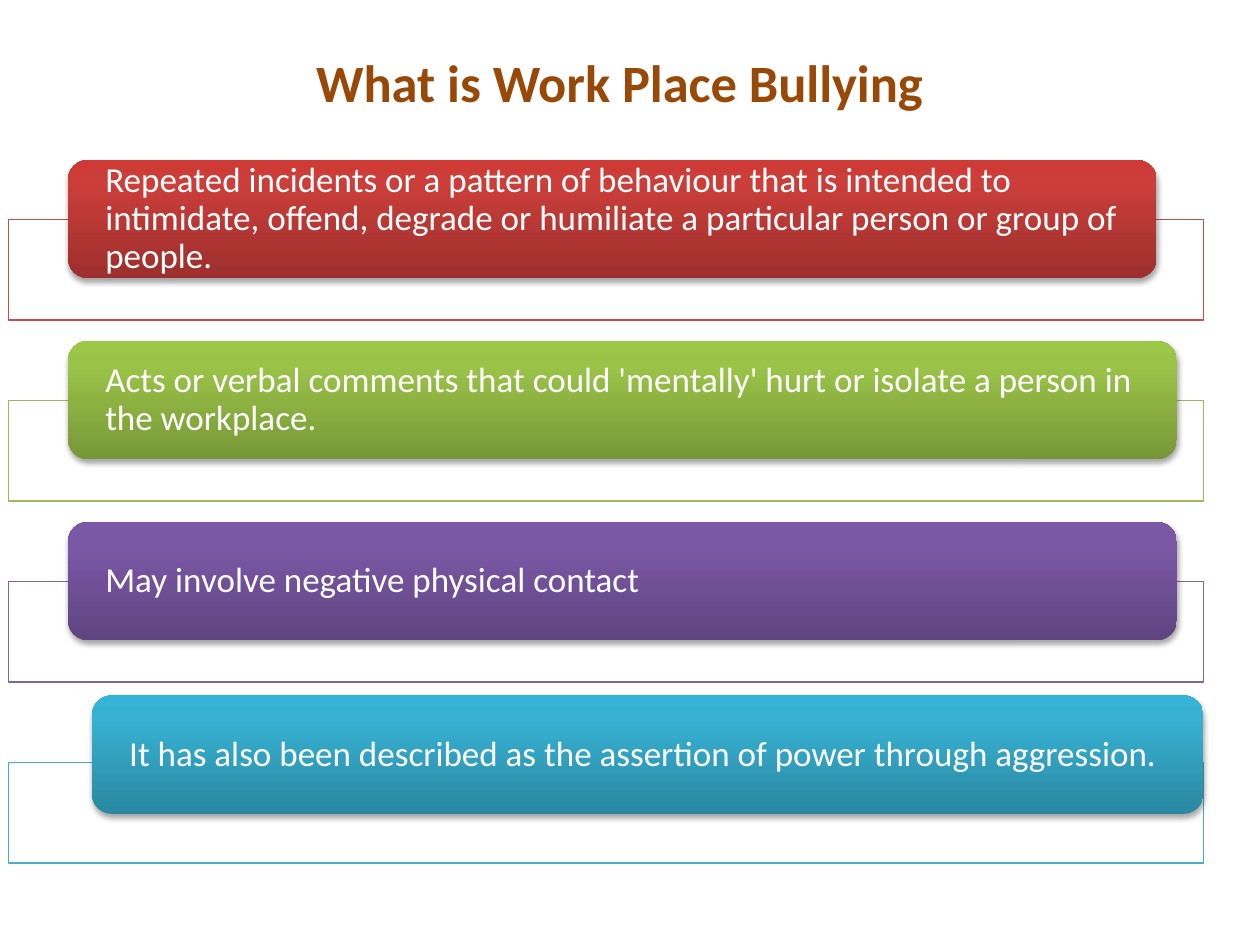
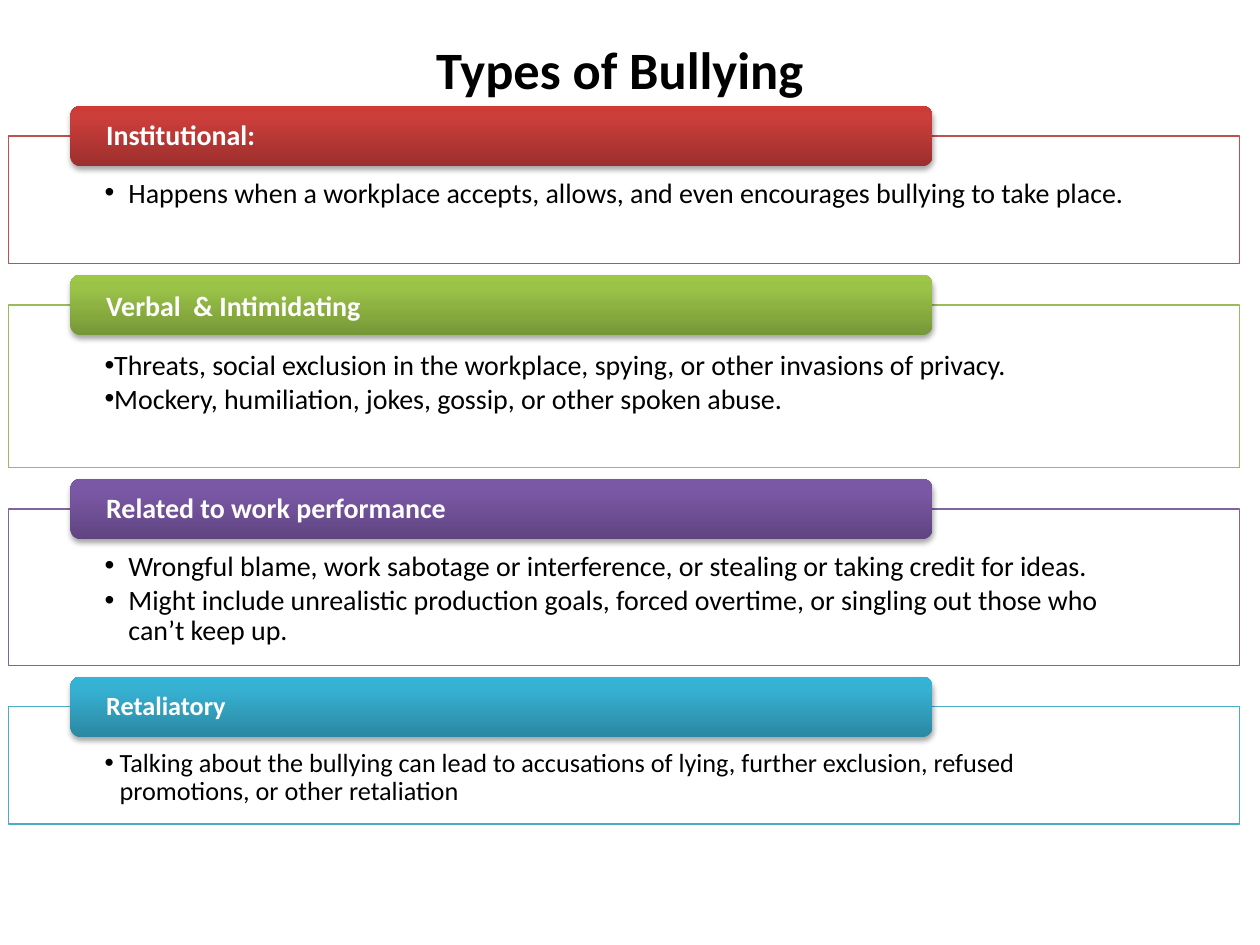
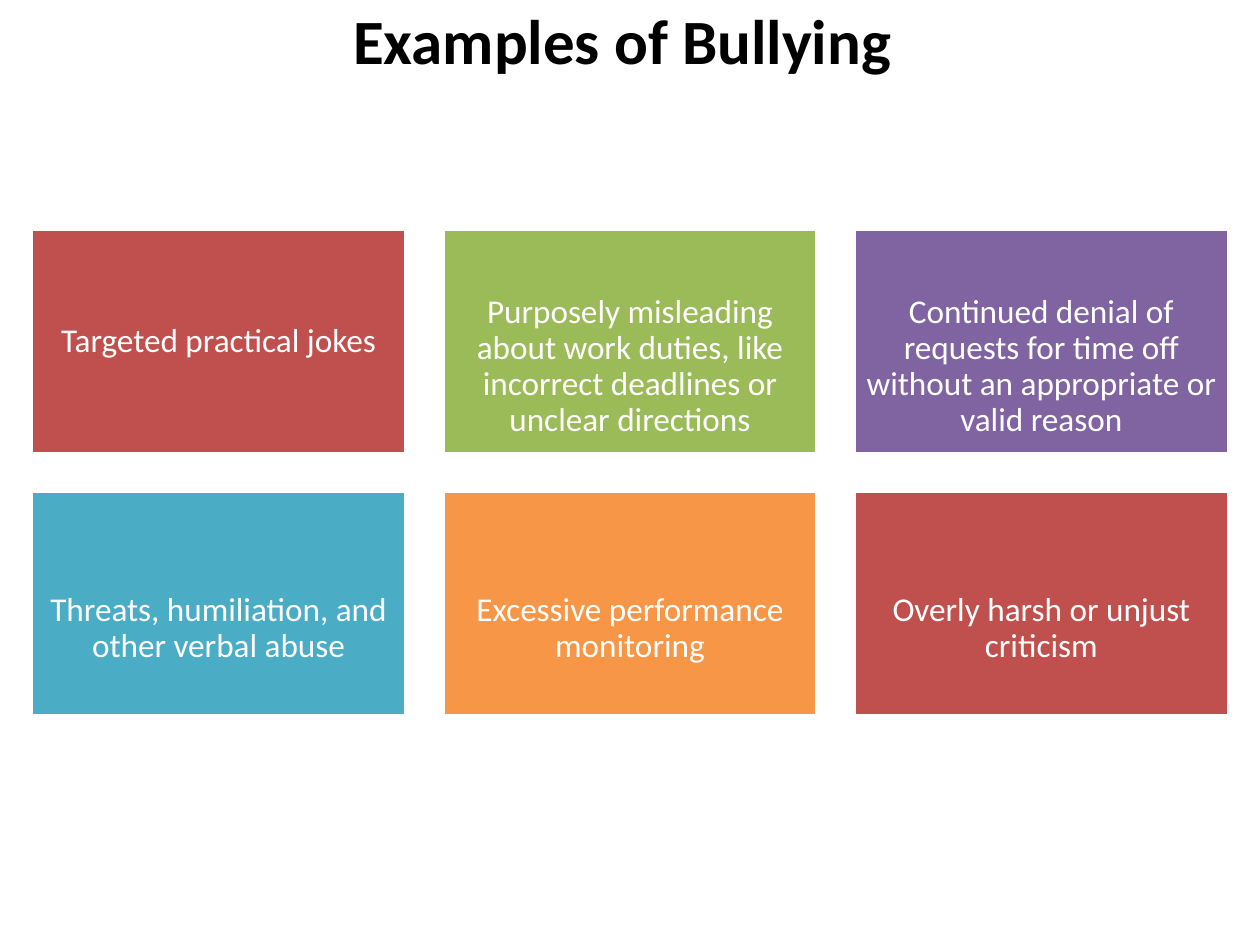
from collections import namedtuple

from lxml import etree
from pptx import Presentation
from pptx import util as u
from pptx.dml.color import RGBColor
from pptx.enum import shapes, text
from pptx.oxml import ns

Box = namedtuple("Box", "left top width height")
Theme = namedtuple("Theme", "base stops")

FONT = "Calibri"
WHITE, BLACK, BROWN, ORANGE = "FFFFFF", "000000", "984807", "F79646"
RED = Theme("C0504D", ("9C2F2D", "CB3E3A", "CE3B37"))
GREEN = Theme("9BBB59", ("779737", "9BC348", "9DC746"))
PURPLE = Theme("8064A2", ("5F4480", "7B58A6", "7C57A8"))
BLUE = Theme("4BACC6", ("2A88A2", "37B1D2", "34B4D6"))
THEMES = (RED, GREEN, PURPLE, BLUE)
STOP_POSITIONS = (0, 80, 100)

DEFINITIONS = (
    ("Repeated incidents or a pattern of behaviour that is intended to intimidate, "
     "offend, degrade or humiliate a particular person or group of people.",
     Box(0.47, -0.47, 8.64, 0.94)),
    ("Acts or verbal comments that could 'mentally' hurt or isolate a person in the workplace.",
     Box(0.47, -0.47, 8.8, 0.94)),
    ("May involve negative physical contact", Box(0.47, -0.47, 8.8, 0.94)),
    ("It has also been described as the assertion of power through aggression.",
     Box(0.66, -0.53, 8.82, 0.94)),
)

BullyingType = namedtuple("BullyingType", "heading details height size indent spacing after")
TYPES = (
    BullyingType("Institutional:", (
        "Happens when a workplace accepts, allows, and even encourages bullying to take place.",
    ), 1.01, 16, 0.19, 0.9, 2.4),
    BullyingType("Verbal  & Intimidating", (
        "Threats, social exclusion in the workplace, spying, or other invasions of privacy.",
        "Mockery, humiliation, jokes, gossip, or other spoken abuse.",
    ), 1.29, 16, 0, 1.0, 0),
    BullyingType("Related to work performance", (
        "Wrongful blame, work sabotage or interference, or stealing or taking credit for ideas.",
        "Might include unrealistic production goals, forced overtime, "
        "or singling out those who can’t keep up.",
    ), 1.24, 16, 0.19, 0.9, 2.4),
    BullyingType("Retaliatory", (
        "Talking about the bullying can lead to accusations of lying, further exclusion, "
        "refused promotions, or other retaliation",
    ), 0.93, 15, 0.12, 0.9, 2.4),
)

SINGLE_INSET, LOWERED_INSET = 0.08, 0.48
EXAMPLES = (
    ("Targeted practical jokes", RED.base, SINGLE_INSET),
    ("Purposely misleading about work duties, like incorrect deadlines or unclear directions",
     GREEN.base, LOWERED_INSET),
    ("Continued denial of requests for time off without an appropriate or valid reason",
     PURPLE.base, LOWERED_INSET),
    ("Threats, humiliation, and other verbal abuse", BLUE.base, LOWERED_INSET),
    ("Excessive performance monitoring", ORANGE, LOWERED_INSET),
    ("Overly harsh or unjust criticism", RED.base, LOWERED_INSET),
)


def color(hex_value):
    """Turn a hex string into a colour."""
    return RGBColor.from_string(hex_value)


def inches(box):
    """Turn a box into four lengths."""
    return [u.Inches(value) for value in box]


def inside(outer, box):
    """Move a box given relative to an outer box onto the slide."""
    return Box(outer.left + box.left, outer.top + box.top, box.width, box.height)


def child(parent, tag, **attributes):
    """Append a drawing element to a parent."""
    element = etree.SubElement(parent, ns.qn(tag))
    for name, value in attributes.items():
        element.set(name, str(value))
    return element


def write(shape, lines, size, font_color, bold=False, align=text.PP_ALIGN.LEFT,
          anchor=text.MSO_ANCHOR.MIDDLE, insets=(0, 0, 0, 0), spacing=0.9, after=0):
    """Fill a shape with formatted paragraphs."""
    frame = shape.text_frame
    frame.word_wrap = True
    frame.vertical_anchor = anchor
    frame.margin_left, frame.margin_top, frame.margin_right, frame.margin_bottom = inches(insets)
    frame.text = "\n".join(lines)
    for paragraph in frame.paragraphs:
        paragraph.alignment = align
        paragraph.line_spacing = spacing
        paragraph.space_after = u.Pt(after)
        for run in paragraph.runs:
            run.font.name = FONT
            run.font.size = u.Pt(size)
            run.font.bold = bold
            run.font.color.rgb = color(font_color)


def add_bullets(shape, indent):
    """Give each paragraph a hanging bullet."""
    for paragraph in shape.text_frame.paragraphs:
        properties = paragraph._p.get_or_add_pPr()
        properties.set("marL", str(u.Inches(indent)))
        properties.set("indent", str(-u.Inches(indent)))
        child(properties, "a:buFont", typeface="Arial")
        child(properties, "a:buChar", char="•")


def add_title(slide, box, title, size=30, font_color=BLACK):
    """Add a centred bold slide title."""
    shape = slide.shapes.add_textbox(*inches(box))
    write(shape, [title], size, font_color, bold=True, align=text.PP_ALIGN.CENTER, spacing=1.0)


def add_rectangle(slide, box, fill, line, line_width):
    """Add a flat outlined rectangle."""
    shape = slide.shapes.add_shape(shapes.MSO_SHAPE.RECTANGLE, *inches(box))
    shape.shadow.inherit = False
    shape.fill.solid()
    shape.fill.fore_color.rgb = color(fill)
    shape.line.color.rgb = color(line)
    shape.line.width = u.Pt(line_width)
    return shape


def add_panel(slide, box, theme):
    """Add a slightly transparent white panel with a coloured outline."""
    panel = add_rectangle(slide, box, WHITE, theme.base, 0.75)
    fill = panel.element.spPr.find(ns.qn("a:solidFill"))
    child(fill[0], "a:alpha", val=90000)
    return panel


def add_bar(slide, box, theme):
    """Add a rounded bar with a gradient and a soft shadow."""
    bar = slide.shapes.add_shape(shapes.MSO_SHAPE.ROUNDED_RECTANGLE, *inches(box))
    bar.line.fill.background()
    properties = bar.element.spPr
    gradient = child(properties, "a:gradFill", rotWithShape=1)
    properties.find(ns.qn("a:ln")).addprevious(gradient)
    stops = child(gradient, "a:gsLst")
    for position, stop_color in zip(STOP_POSITIONS, theme.stops):
        stop = child(stops, "a:gs", pos=position * 1000)
        child(stop, "a:srgbClr", val=stop_color)
    child(gradient, "a:lin", ang=270 * 60000, scaled=0)
    shadow = child(child(properties, "a:effectLst"), "a:outerShdw", blurRad=u.Pt(3.1),
                   dist=u.Pt(1.8), dir=90 * 60000, rotWithShape=0)
    child(child(shadow, "a:srgbClr", val=BLACK), "a:alpha", val=35000)
    return bar


def add_definitions(slide, box):
    """Stack the definition bars over their panels at an equal pitch."""
    panel_height = 0.8
    pitch = (box.height - panel_height) / (len(DEFINITIONS) - 1)
    for index, ((definition, bar_box), theme) in enumerate(zip(DEFINITIONS, THEMES)):
        panel_box = inside(box, Box(0, index * pitch, box.width, panel_height))
        add_panel(slide, panel_box, theme)
        bar = add_bar(slide, inside(panel_box, bar_box), theme)
        write(bar, [definition], 20, WHITE, insets=(0.25, 0, 0.25, 0))


def add_types(slide, box):
    """Stack the bullying types, each a bulleted panel with a heading bar."""
    gap, top = 0.33, 0
    for kind, theme in zip(TYPES, THEMES):
        panel_box = inside(box, Box(0, top, box.width, kind.height))
        panel = add_panel(slide, panel_box, theme)
        write(panel, kind.details, kind.size, BLACK, anchor=text.MSO_ANCHOR.TOP,
              insets=(0.76, 0.34, 0.76, 0.12), spacing=kind.spacing, after=kind.after)
        add_bullets(panel, kind.indent)
        bar = add_bar(slide, inside(panel_box, Box(0.49, -0.24, 6.84, 0.48)), theme)
        write(bar, [kind.heading], kind.size, WHITE, bold=True,
              insets=(0.26, 0, 0.26, 0), spacing=kind.spacing)
        top += kind.height + gap


def add_examples(slide, box):
    """Lay the examples out as a grid of coloured tiles."""
    columns, rows = 3, 2
    width, height = 2.97, 1.78
    column_pitch = (box.width - width) / (columns - 1)
    row_pitch = (box.height - height) / (rows - 1)
    for index, (example, fill, top_inset) in enumerate(EXAMPLES):
        row, column = divmod(index, columns)
        tile_box = inside(box, Box(column * column_pitch, row * row_pitch, width, height))
        tile = add_rectangle(slide, tile_box, fill, WHITE, 2)
        write(tile, [example], 19, WHITE, align=text.PP_ALIGN.CENTER,
              insets=(0.08, top_inset, 0.08, 0.08))


def main():
    """Build and save the presentation."""
    presentation = Presentation()
    presentation.slide_width, presentation.slide_height = u.Inches(10), u.Inches(7.5)
    definition_slide, type_slide, example_slide = (
        presentation.slides.add_slide(presentation.slide_layouts[6]) for _ in range(3))

    add_title(definition_slide, Box(0.29, 0.36, 9.26, 0.58), "What is Work Place Bullying",
              font_color=BROWN)
    add_definitions(definition_slide, Box(0.07, 1.74, 9.48, 5.11))

    add_title(type_slide, Box(0.29, 0.25, 9.26, 0.58), "Types of Bullying")
    add_types(type_slide, Box(0.07, 1.08, 9.77, 5.47))

    add_title(example_slide, Box(0.44, 0, 9, 0.62), "Examples of Bullying", size=36)
    add_examples(example_slide, Box(0.25, 1.82, 9.5, 3.86))

    presentation.save("out.pptx")


if __name__ == "__main__":
    main()
